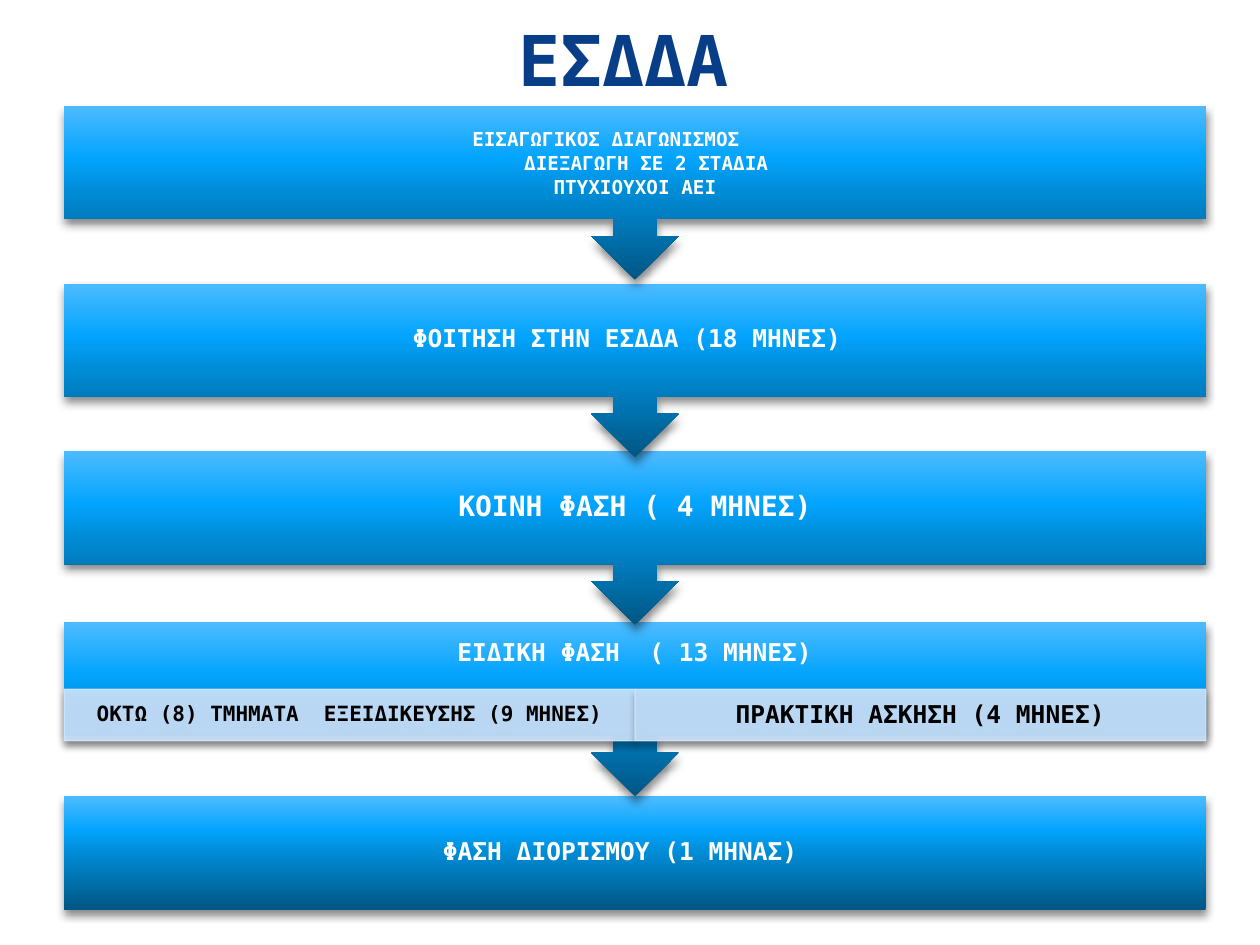
from dataclasses import dataclass

from lxml import etree
from pptx import Presentation
from pptx.dml.color import RGBColor
from pptx.enum.shapes import MSO_SHAPE as SHAPE
from pptx.enum.text import MSO_ANCHOR as ANCHOR, PP_ALIGN as ALIGN
from pptx.oxml.ns import qn
from pptx.util import Inches, Pt


@dataclass(frozen=True)
class Theme:
    font: str = "DejaVu Sans Mono"
    title: str = "073E87"
    light: str = "FFFFFF"
    dark: str = "000000"
    panel: str = "CEE5FE"
    shadow: str = "000000"
    gradient: tuple = ((0, "005684"), (50, "008BD5"), (70, "03A4FE"), (100, "4DBBFF"))
    title_size: int = 40
    large: int = 16
    body: int = 14
    small: int = 12
    tiny: int = 11


T = Theme()
LEFT, WIDTH = 0.51, 9.06
BOX_H, STEP_H = 0.9, 1.38


def sub(parent, tag, **attrs):
    return etree.SubElement(parent, qn(tag), {k: str(v) for k, v in attrs.items()})


def add_color(parent, color, alpha=None):
    c = sub(parent, "a:srgbClr", val=color)
    if alpha is not None:
        sub(c, "a:alpha", val=alpha * 1000)


def set_text(s, lines, size=T.body, color=T.light, spacing=0.9,
             insets=(0.11, 0.11, 0.11, 0.11), anchor=ANCHOR.MIDDLE):
    """Each line is (text, left indent, right indent), in inches."""
    tf = s.text_frame
    tf.word_wrap = True
    tf.vertical_anchor = anchor
    (tf.margin_left, tf.margin_top,
     tf.margin_right, tf.margin_bottom) = map(Inches, insets)
    for i, (text, left, right) in enumerate(lines):
        p = tf.add_paragraph() if i else tf.paragraphs[0]
        p.alignment = ALIGN.CENTER
        p.line_spacing = spacing
        pPr = p._p.get_or_add_pPr()
        pPr.set("marL", str(Inches(left)))
        pPr.set("marR", str(Inches(right)))
        r = p.add_run()
        r.text = text
        r.font.name = T.font
        r.font.size = Pt(size)
        r.font.bold = True
        r.font.color.rgb = RGBColor.from_string(color)


def add_shadow(s, alpha, blur, dist):
    s.shadow.inherit = False
    effects = s._element.spPr.find(qn("a:effectLst"))
    shadow = sub(effects, "a:outerShdw", blurRad=Pt(blur), dist=Pt(dist),
                 dir=5400000, rotWithShape=0)
    add_color(shadow, T.shadow, alpha)


def add_step(slide, kind, top, height, lines, **text_format):
    """Gradient box, with or without a down arrow, holding its text."""
    s = slide.shapes.add_shape(kind, Inches(LEFT), Inches(top), Inches(WIDTH), Inches(height))
    s.fill.gradient()
    s.fill.gradient_angle = 90
    stops = s._element.spPr.find(qn("a:gradFill")).find(qn("a:gsLst"))
    for stop in list(stops):
        stops.remove(stop)
    for pos, color in T.gradient:
        add_color(sub(stops, "a:gs", pos=pos * 1000), color)
    s.line.fill.background()
    add_shadow(s, 45, 5, 3)
    set_text(s, lines, **text_format)


def add_panel(slide, left, text, size):
    """Pale translucent half-width panel."""
    s = slide.shapes.add_shape(SHAPE.RECTANGLE, Inches(left), Inches(5.47),
                               Inches(WIDTH / 2), Inches(0.41))
    for fmt in (s.fill, s.line.fill):
        fmt.solid()
        fmt.fore_color.rgb = RGBColor.from_string(T.panel)
    s.line.width = Pt(0.75)
    for c in s._element.spPr.iter(qn("a:srgbClr")):
        sub(c, "a:alpha", val=90000)
    add_shadow(s, 35, 4, 3)
    set_text(s, [(text, 0, 0)], size=size, color=T.dark, insets=(0.09, 0.02, 0.09, 0.02))


def add_title(slide, text):
    s = slide.shapes.add_textbox(Inches(0.98), Inches(0.05), Inches(8.18), Inches(0.63))
    set_text(s, [(text, 0, 0.24)], size=T.title_size, color=T.title, spacing=1.0,
             insets=(0.1, 0.08, 0.1, 0), anchor=ANCHOR.TOP)


def main():
    prs = Presentation()
    prs.slide_width, prs.slide_height = Inches(10), Inches(7.5)
    slide = prs.slides.add_slide(prs.slide_layouts[6])

    add_title(slide, "ΕΣΔΔΑ")

    # Steps run from the last to the first, so each arrow overlaps the next box
    callout = SHAPE.DOWN_ARROW_CALLOUT
    add_step(slide, SHAPE.RECTANGLE, 6.32, BOX_H, [("ΦΑΣΗ ΔΙΟΡΙΣΜΟΥ (1 ΜΗΝΑΣ)", 0, 0.23)])

    # Special phase, with its two parts
    add_step(slide, callout, 4.94, STEP_H, [("ΕΙΔΙΚΗ ΦΑΣΗ  ( 13 ΜΗΝΕΣ)", 0, 0)],
             insets=(0.11, 0.11, 0.11, 0.52))
    add_panel(slide, LEFT, "OKTΩ (8) ΤΜΗΜΑΤΑ  ΕΞΕΙΔΙΚΕΥΣΗΣ (9 ΜΗΝΕΣ)", T.small)
    add_panel(slide, LEFT + WIDTH / 2, "ΠΡΑΚΤΙΚΗ ΑΣΚΗΣΗ (4 ΜΗΝΕΣ)", T.body)

    # Common phase, studies and entrance competition
    add_step(slide, callout, 3.58, STEP_H, [("ΚΟΙΝΗ ΦΑΣΗ ( 4 ΜΗΝΕΣ)", 0, 0)], size=T.large)
    add_step(slide, callout, 2.25, STEP_H, [("ΦΟΙΤΗΣΗ ΣΤΗΝ ΕΣΔΔΑ (18 ΜΗΝΕΣ)", 0, 0.12)])
    add_step(slide, callout, 0.84, STEP_H,
             [("ΕΙΣΑΓΩΓΙΚΟΣ ΔΙΑΓΩΝΙΣΜΟΣ", 0, 0.46),
              ("ΔΙΕΞΑΓΩΓΗ ΣΕ 2 ΣΤΑΔΙΑ", 0.18, 0),
              ("ΠΤΥΧΙΟΥΧΟΙ ΑΕΙ", 0, 0)], size=T.tiny, spacing=1.05)

    prs.save("out.pptx")


if __name__ == "__main__":
    main()
